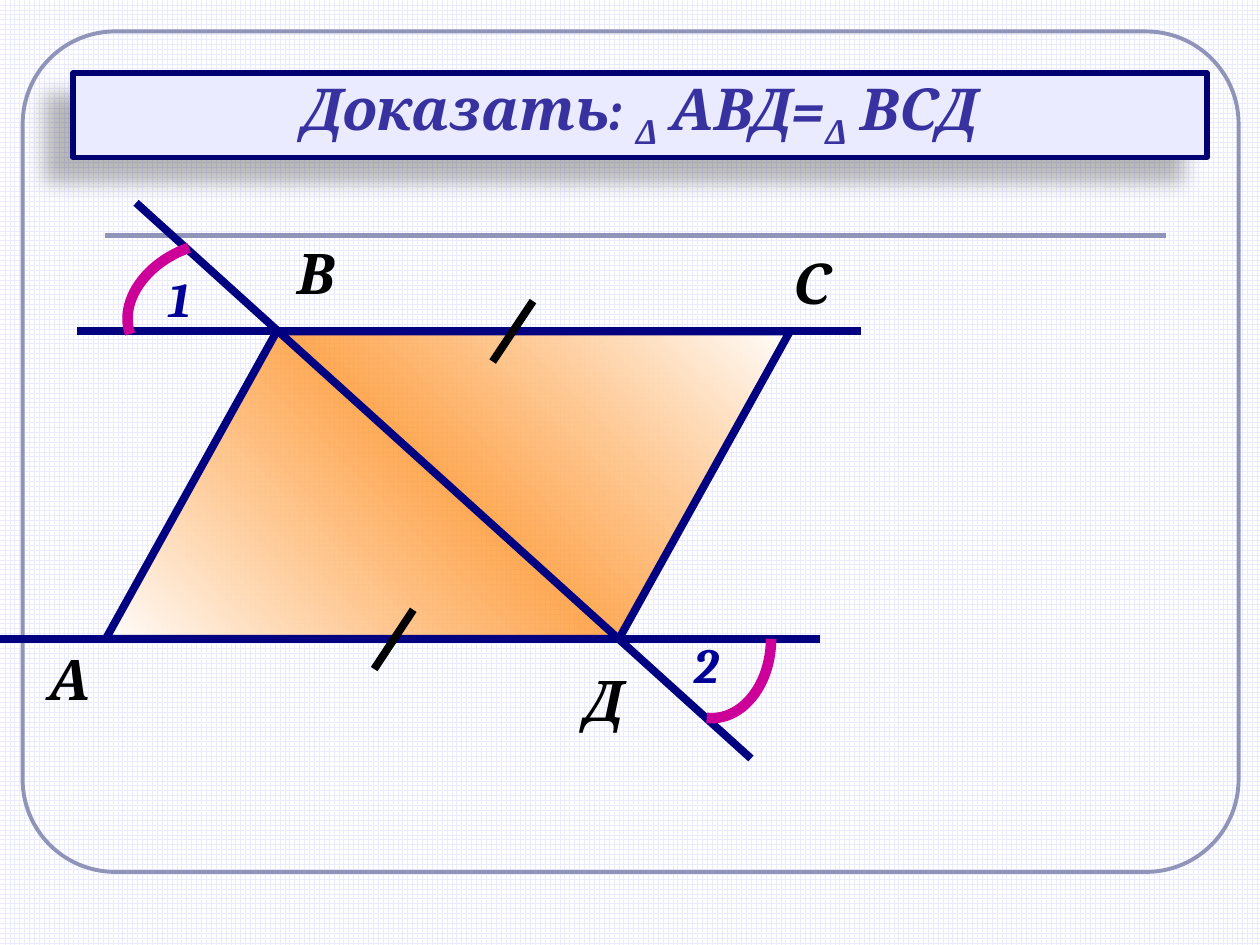
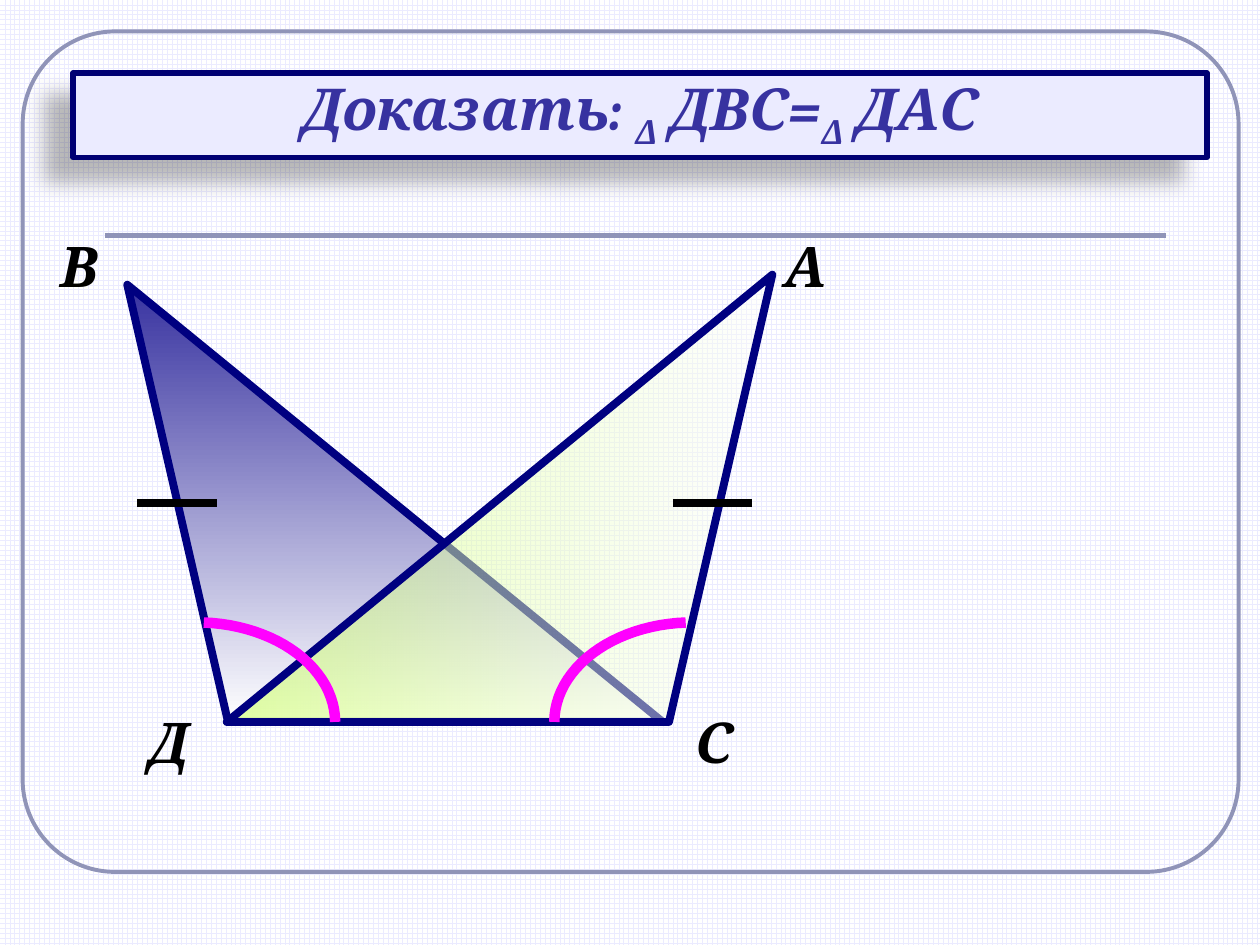
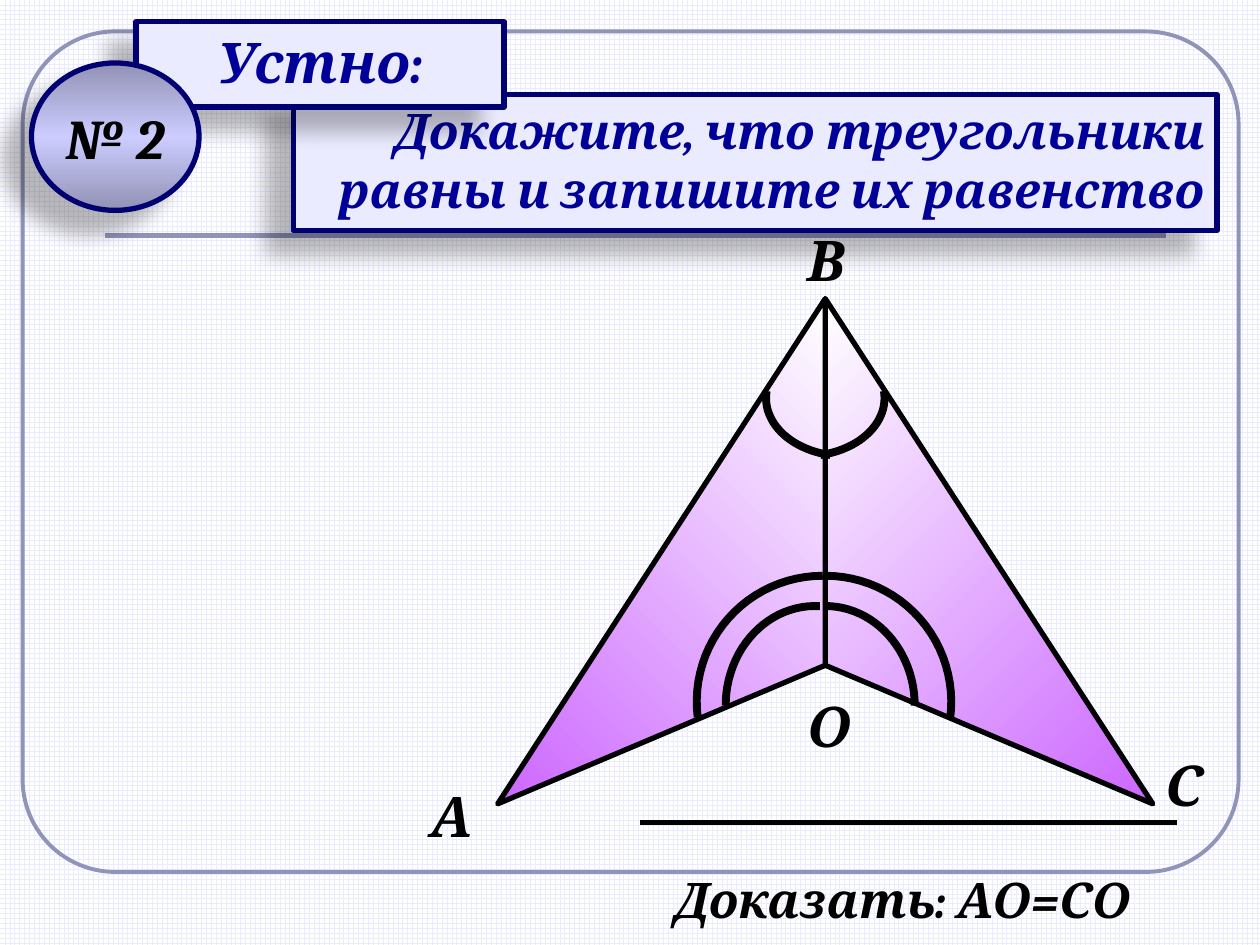
import math
from dataclasses import dataclass

import pptx
import pptx.dml.color
import pptx.enum.dml
import pptx.enum.shapes
import pptx.enum.text
import pptx.oxml
import pptx.oxml.ns
import pptx.util
from lxml import etree

SHAPE = pptx.enum.shapes.MSO_SHAPE
ALIGN = pptx.enum.text.PP_ALIGN
ANCHOR = pptx.enum.text.MSO_ANCHOR
AUTO = pptx.enum.text.MSO_AUTO_SIZE
COLUMNS, ROWS = 10, 7.5


@dataclass(frozen=True)
class Theme:
    """Colours, font and type sizes of the deck."""
    font: str = "Cambria"
    paper: str = "FFFFFF"
    pale: str = "EBEBFF"
    frame: str = "9094B8"
    border: str = "000073"
    navy: str = "000080"
    blue: str = "000099"
    indigo: str = "3732A0"
    ink: str = "000000"
    orange: str = "FF9933"
    lime: str = "CCFF66"
    violet: str = "CC66FF"
    crimson: str = "CC0099"
    magenta: str = "FF00FF"
    steel: str = "9292B6"
    lilac: str = "CCCCFF"
    title: int = 33
    large: int = 32
    medium: int = 28
    thin: float = 2.25
    rule: float = 3
    bold: float = 4.5
    heavy: float = 6


T = Theme()


def rgb(colour):
    """Turn a hex string into a colour."""
    return pptx.dml.color.RGBColor.from_string(colour)


def col(n):
    """Horizontal grid position."""
    return pptx.util.Inches(10 * n / COLUMNS)


def row(n):
    """Vertical grid position."""
    return pptx.util.Inches(7.5 * n / ROWS)


def box(left, top, width, height):
    """Grid box as left, top, width and height lengths."""
    return col(left), row(top), col(width), row(height)


def outline(sp, colour, weight):
    """Give a shape or connector a solid line."""
    sp.line.color.rgb = rgb(colour)
    sp.line.width = pptx.util.Pt(weight)


def gradient(sp, stops, angle):
    """Fill a shape with (position, colour, opacity) stops, angle anticlockwise."""
    sp.fill.gradient()
    sp.fill.gradient_angle = angle
    gs_list = sp._element.spPr.find(".//" + pptx.oxml.ns.qn("a:gsLst"))
    for gs in list(gs_list):
        gs_list.remove(gs)
    for position, colour, opacity in stops:
        gs_list.append(pptx.oxml.parse_xml(
            f'<a:gs {pptx.oxml.ns.nsdecls("a")} pos="{position * 1000}">'
            f'<a:srgbClr val="{colour}"><a:alpha val="{opacity * 1000}"/></a:srgbClr></a:gs>'))


def cast_shadow(sp):
    """Add the soft shadow that falls to the lower left."""
    sp._element.spPr.append(pptx.oxml.parse_xml(
        f'<a:effectLst {pptx.oxml.ns.nsdecls("a")}>'
        f'<a:outerShdw blurRad="{pptx.util.Pt(11.8)}" dist="{pptx.util.Pt(19.7)}"'
        f' dir="{141 * 60000}" algn="ctr" rotWithShape="0">'
        '<a:srgbClr val="000000"><a:alpha val="28000"/></a:srgbClr>'
        '</a:outerShdw></a:effectLst>'))


def preset(s, kind, area, colour, weight):
    """Add an unfilled preset shape."""
    sp = s.shapes.add_shape(kind, *box(*area))
    sp.shadow.inherit = False
    sp.fill.background()
    outline(sp, colour, weight)
    return sp


def line(s, start, end, colour, weight):
    """Add a straight line between two grid points."""
    cx = s.shapes.add_connector(pptx.enum.shapes.MSO_CONNECTOR.STRAIGHT,
                                col(start[0]), row(start[1]), col(end[0]), row(end[1]))
    outline(cx, colour, weight)
    etree.SubElement(cx._element.spPr, pptx.oxml.ns.qn("a:effectLst"))


def path(s, points, colour, weight, close):
    """Add an unfilled freeform through grid points."""
    first, *rest = [(col(x), row(y)) for x, y in points]
    builder = s.shapes.build_freeform(*first)
    builder.add_line_segments(rest, close=close)
    sp = builder.convert_to_shape()
    sp.shadow.inherit = False
    sp.fill.background()
    outline(sp, colour, weight)
    return sp


def triangle(s, corners, colour, weight, stops, angle):
    """Add a triangle with a gradient fill."""
    gradient(path(s, corners, colour, weight, True), stops, angle)


def arc(s, centre, radii, start, end, colour, weight, tilt=0):
    """Add an elliptical arc, angles in degrees clockwise from the right."""
    turn = math.radians(tilt)
    points = []
    for step in range(25):
        a = math.radians(start + (end - start) * step / 24)
        x, y = radii[0] * math.cos(a), radii[1] * math.sin(a)
        points.append((centre[0] + x * math.cos(turn) - y * math.sin(turn),
                       centre[1] + x * math.sin(turn) + y * math.cos(turn)))
    path(s, points, colour, weight, False)


def write(sp, pieces, size, colour, align=ALIGN.LEFT, anchor=ANCHOR.TOP,
          wrap=True, grow=True, before=0):
    """Write one bold italic paragraph, lowering each triangle sign."""
    tf = sp.text_frame
    tf.word_wrap = wrap
    tf.vertical_anchor = anchor
    tf.auto_size = AUTO.SHAPE_TO_FIT_TEXT if grow else AUTO.NONE
    p = tf.paragraphs[0]
    p.alignment = align
    p.space_before = pptx.util.Pt(before)
    p.font.name, p.font.size = T.font, pptx.util.Pt(size)
    p.font.bold = p.font.italic = True
    p.font.color.rgb = rgb(colour)
    for piece in pieces:
        r = p.add_run()
        r.text = piece
        if piece == "Δ":
            r._r.get_or_add_rPr().set("baseline", "-25000")


def label(s, text, left, top, width=0.54, height=0.63, size=T.large,
          colour=T.ink, align=ALIGN.LEFT):
    """Add a text label on one line."""
    write(s.shapes.add_textbox(*box(left, top, width, height)), [text], size, colour,
          align, wrap=False)


def panel(s, area, pieces, size, colour, **layout):
    """Add a pale bordered panel with a shadow and text."""
    sp = preset(s, SHAPE.RECTANGLE, area, T.border, T.rule)
    sp.fill.solid()
    sp.fill.fore_color.rgb = rgb(T.pale)
    sp._element.spPr.remove(sp._element.spPr.find(pptx.oxml.ns.qn("a:effectLst")))
    cast_shadow(sp)
    write(sp, pieces, size, colour, **layout)


def equality_title(s, first, second):
    """Add the title that asks to prove two triangles equal."""
    panel(s, (0.58, 0.58, 9, 0.67), ["Доказать: ", "Δ", f" {first}=", "Δ", f" {second}"],
          T.title, T.indigo, align=ALIGN.CENTER, anchor=ANCHOR.BOTTOM, grow=False)


def badge(s, text):
    """Add the round task number."""
    sp = preset(s, SHAPE.OVAL, (0.25, 0.5, 1.33, 1.17), T.border, T.rule)
    gradient(sp, [(0, T.steel, 100), (50, T.lilac, 100), (100, T.steel, 100)], 270)
    sp._element.spPr.remove(sp._element.spPr.find(pptx.oxml.ns.qn("a:effectLst")))
    cast_shadow(sp)
    write(sp, [text], T.large, T.ink, ALIGN.CENTER, ANCHOR.MIDDLE, wrap=False, grow=False)


def new_slide(prs):
    """Add a blank slide with the rounded frame and the rule."""
    s = prs.slides.add_slide(prs.slide_layouts[6])
    frame = preset(s, SHAPE.ROUNDED_RECTANGLE, (0.18, 0.25, 9.65, 6.67), T.frame, T.thin)
    frame.adjustments[0] = 0.11
    line(s, (0.83, 1.87), (9.25, 1.87), T.frame, T.rule)
    return s


def grid_background(prs):
    """Put the squared paper on the master."""
    fill = prs.slide_master.background.fill
    fill.patterned()
    fill.pattern = pptx.enum.dml.MSO_PATTERN.LARGE_GRID
    fill.fore_color.rgb = rgb(T.pale)
    fill.back_color.rgb = rgb(T.paper)


def parallelogram_slide(prs):
    """Parallelogram cut by its diagonal."""
    s = new_slide(prs)
    sp = preset(s, SHAPE.PARALLELOGRAM, (0.84, 2.63, 5.43, 2.44), T.navy, T.bold)
    sp.adjustments[0] = 0.556
    gradient(sp, [(0, T.paper, 100), (50, T.orange, 82), (100, T.paper, 100)], 45)
    for start, end in [((6.83, 2.63), (0.61, 2.63)), ((-0.42, 5.07), (6.51, 5.07)),
                       ((1.08, 1.61), (5.96, 6.02))]:
        line(s, start, end, T.navy, T.bold)
    for start, end in [((4.23, 2.39), (3.91, 2.87)), ((3.28, 4.84), (2.97, 5.31))]:
        line(s, start, end, T.ink, T.bold)
    arc(s, (1.63, 2.42), (0.47, 0.64), 92, 185, T.crimson, T.heavy, tilt=67.3)
    arc(s, (5.65, 5.07), (0.47, 0.63), 95, 0, T.crimson, T.heavy)
    for text, left, top in [("1", 1.24, 2.08), ("2", 5.41, 4.99)]:
        label(s, text, left, top, 0.44, 0.57, T.medium, T.blue)
    for text, left, top in [("А", 0.29, 5.07), ("В", 2.26, 1.84),
                            ("С", 6.2, 1.92), ("Д", 4.54, 5.23)]:
        label(s, text, left, top)
    equality_title(s, "АВД", "ВСД")


def crossed_triangles_slide(prs):
    """Two overlapping triangles on a common base."""
    s = new_slide(prs)
    triangle(s, [(5.26, 5.73), (1.81, 5.73), (1.01, 2.26)], T.navy, T.bold,
             [(0, T.indigo, 100), (100, T.paper, 100)], 270)
    triangle(s, [(1.8, 5.73), (5.31, 5.73), (6.13, 2.18)], T.navy, T.bold,
             [(0, T.lime, 60), (100, T.paper, 41)], 0)
    for text, left, top in [("Д", 1.09, 5.57), ("А", 6.13, 1.79),
                            ("В", 0.38, 1.79), ("С", 5.42, 5.57)]:
        label(s, text, left, top)
    for left in (1.09, 5.34):
        line(s, (left, 3.99), (left + 0.63, 3.99), T.ink, T.bold)
    for x, start, end in [(1.56, -87, 0), (5.5, 267, 180)]:
        arc(s, (x, 5.73), (1.1, 0.79), start, end, T.magenta, T.heavy)
    equality_title(s, "ДВС", "ДАС")


def arrowhead_slide(prs):
    """Oral task with two triangles sharing a side."""
    s = new_slide(prs)
    for x, angle in [(9.15, 135), (3.95, 45)]:
        triangle(s, [(x, 6.38), (6.55, 2.37), (6.55, 5.28)], T.ink, T.rule,
                 [(0, T.violet, 100), (100, T.paper, 100)], angle)
    for centre, radii, start, end in [
            ((6.55, 5.57), (1, 1), -90, 7.5), ((6.53, 5.57), (1, 1), 270, 173),
            ((6.55, 5.6), (0.71, 0.79), -90, 0), ((6.47, 5.6), (0.71, 0.79), 273, 180),
            ((6.71, 3.16), (0.63, 0.46), 101, 187), ((6.39, 3.16), (0.63, 0.46), 79, -7)]:
        arc(s, centre, radii, start, end, T.ink, T.bold)
    for text, left, top in [("А", 3.32, 6.15), ("В", 6.31, 1.74),
                            ("С", 9.15, 5.91), ("О", 6.31, 5.44)]:
        label(s, text, left, top)
    label(s, "Доказать: АО=СО", 5.12, 6.85, 4.09, 0.57, T.medium, align=ALIGN.CENTER)
    line(s, (5.08, 6.53), (9.34, 6.53), T.ink, T.rule)
    panel(s, (2.33, 0.75, 7.33, 1.08),
          ["Докажите, что треугольники равны и запишите их равенство"],
          T.medium, T.blue, align=ALIGN.RIGHT, before=5.6)
    panel(s, (1.08, 0.17, 2.92, 0.68), ["Устно:"], T.large, T.blue,
          align=ALIGN.CENTER, before=6.4)
    badge(s, "№ 2")


def main():
    """Build the three geometry slides."""
    prs = pptx.Presentation()
    prs.slide_width, prs.slide_height = col(COLUMNS), row(ROWS)
    grid_background(prs)
    parallelogram_slide(prs)
    crossed_triangles_slide(prs)
    arrowhead_slide(prs)
    prs.save("out.pptx")


if __name__ == "__main__":
    main()
